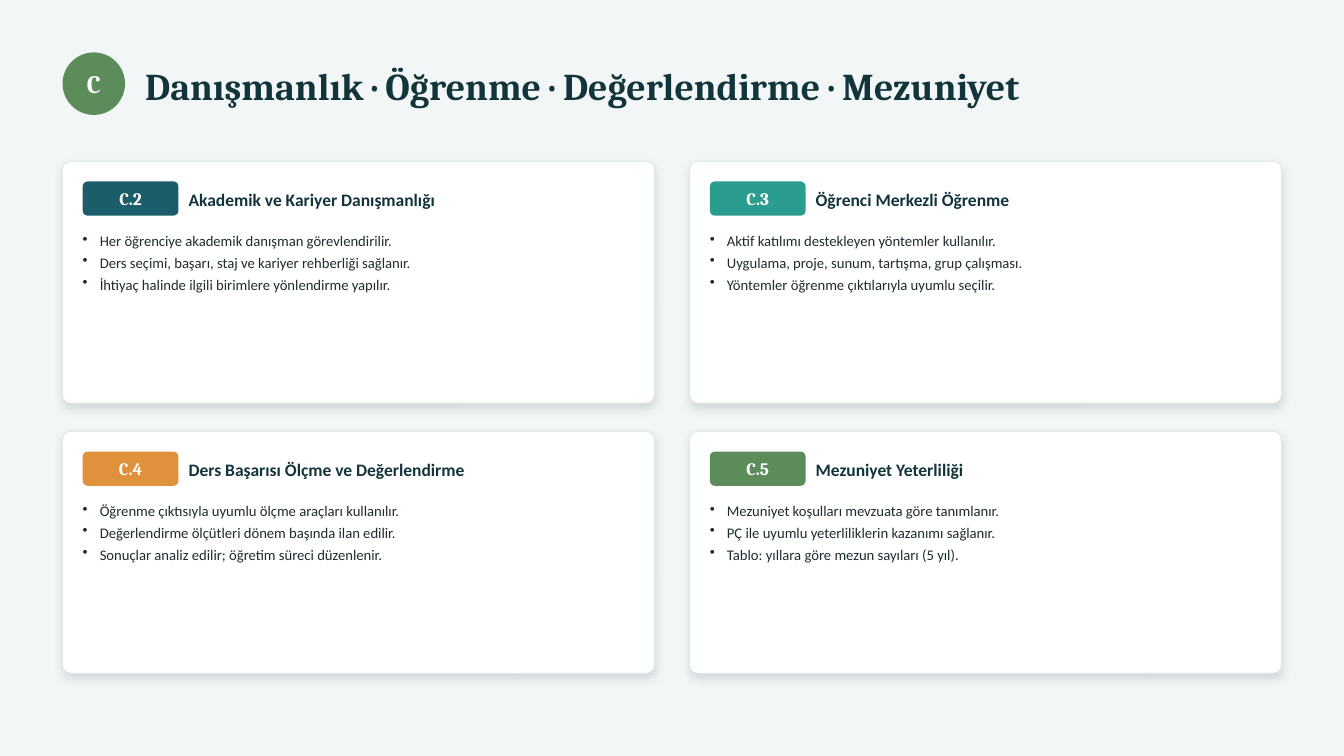
import pptx
import pptx.dml.color
import pptx.enum.shapes
import pptx.enum.text
import pptx.oxml
import pptx.oxml.ns
import pptx.util

PX = 9144  # EMU per px, 100 px to the inch
SHAPE = pptx.enum.shapes.MSO_SHAPE
ALIGN = pptx.enum.text.PP_ALIGN
ANCHOR = pptx.enum.text.MSO_ANCHOR

BACKGROUND, WHITE, BORDER = "F3F6F7", "FFFFFF", "E2E9EA"
HEADING, BODY = "12343B", "1F2C30"
PETROL, TEAL, ORANGE, GREEN = "1C5D6B", "2A9D8F", "E0913B", "5B8C5A"
SERIF, SANS = "Cambria", "Calibri"

# Card grid
CARD_LEFT, CARD_TOP = 62, 160
CARD_WIDTH, CARD_HEIGHT = 587, 240
GAP_X, GAP_Y = 35, 28
PADDING = 20
BADGE_WIDTH, BADGE_HEIGHT = 95, 34
INDENT = 17

CARDS = [
    ("C.2", PETROL, "Akademik ve Kariyer Danışmanlığı", [
        "Her öğrenciye akademik danışman görevlendirilir.",
        "Ders seçimi, başarı, staj ve kariyer rehberliği sağlanır.",
        "İhtiyaç halinde ilgili birimlere yönlendirme yapılır."]),
    ("C.3", TEAL, "Öğrenci Merkezli Öğrenme", [
        "Aktif katılımı destekleyen yöntemler kullanılır.",
        "Uygulama, proje, sunum, tartışma, grup çalışması.",
        "Yöntemler öğrenme çıktılarıyla uyumlu seçilir."]),
    ("C.4", ORANGE, "Ders Başarısı Ölçme ve Değerlendirme", [
        "Öğrenme çıktısıyla uyumlu ölçme araçları kullanılır.",
        "Değerlendirme ölçütleri dönem başında ilan edilir.",
        "Sonuçlar analiz edilir; öğretim süreci düzenlenir."]),
    ("C.5", GREEN, "Mezuniyet Yeterliliği", [
        "Mezuniyet koşulları mevzuata göre tanımlanır.",
        "PÇ ile uyumlu yeterliliklerin kazanımı sağlanır.",
        "Tablo: yıllara göre mezun sayıları (5 yıl)."]),
]


def color(hex_string):
    return pptx.dml.color.RGBColor.from_string(hex_string)


def px(*lengths):
    return [length * PX for length in lengths]


def add_bullet(paragraph):
    properties = paragraph._p.get_or_add_pPr()
    properties.set("marL", str(INDENT * PX))
    properties.set("indent", str(-INDENT * PX))
    bullet = pptx.oxml.parse_xml(
        f'<a:buChar {pptx.oxml.ns.nsdecls("a")} char="•"/>')
    properties.append(bullet)
    paragraph.space_after = pptx.util.Pt(3)


def write_text(shape, lines, *, size, font=SANS, fill=HEADING, bold=False,
               align=ALIGN.LEFT, anchor=ANCHOR.MIDDLE, bullets=False):
    frame = shape.text_frame
    frame.word_wrap = True
    frame.vertical_anchor = anchor
    frame.margin_left = frame.margin_right = 0
    frame.margin_top = frame.margin_bottom = 0
    frame.text = "\n".join(lines)
    for paragraph in frame.paragraphs:
        paragraph.alignment = align
        if bullets:
            add_bullet(paragraph)
        for run in paragraph.runs:
            run.font.size = pptx.util.Pt(size)
            run.font.name = font
            run.font.bold = bold
            run.font.color.rgb = color(fill)


def add_text(slide, box, lines, **text_format):
    write_text(slide.shapes.add_textbox(*px(*box)), lines, **text_format)


def add_block(slide, kind, box, fill, line=None, radius=0):
    """Filled shape; radius is the corner radius in px."""
    shape = slide.shapes.add_shape(kind, *px(*box))
    shape.shadow.inherit = False
    shape.fill.solid()
    shape.fill.fore_color.rgb = color(fill)
    if line:
        shape.line.color.rgb = color(line)
        shape.line.width = pptx.util.Pt(0.75)
    else:
        shape.line.fill.background()
    if radius:
        shape.adjustments[0] = radius / min(box[2:])
    return shape


def add_soft_shadow(shape):
    effects = shape._element.spPr.find(pptx.oxml.ns.qn("a:effectLst"))
    effects.append(pptx.oxml.parse_xml(
        f'<a:outerShdw {pptx.oxml.ns.nsdecls("a")} blurRad="{pptx.util.Pt(7)}"'
        f' dist="{pptx.util.Pt(3)}" dir="5400000" algn="bl" rotWithShape="0">'
        '<a:srgbClr val="0C2A30"><a:alpha val="14000"/></a:srgbClr>'
        '</a:outerShdw>'))


def add_badge(slide, kind, box, label, fill, size, radius=0):
    badge = add_block(slide, kind, box, fill, radius=radius)
    write_text(badge, [label], size=size, font=SERIF, fill=WHITE, bold=True,
               align=ALIGN.CENTER)


def add_card(slide, left, top, code, accent, title, points):
    card = add_block(slide, SHAPE.ROUNDED_RECTANGLE,
                     (left, top, CARD_WIDTH, CARD_HEIGHT),
                     WHITE, line=BORDER, radius=8)
    add_soft_shadow(card)

    inner_left, inner_top = left + PADDING, top + PADDING
    inner_width = CARD_WIDTH - 2 * PADDING
    add_badge(slide, SHAPE.ROUNDED_RECTANGLE,
              (inner_left, inner_top, BADGE_WIDTH, BADGE_HEIGHT),
              code, accent, 12.5, radius=5)

    title_offset = BADGE_WIDTH + 10
    add_text(slide, (inner_left + title_offset, inner_top - 2,
                     inner_width - title_offset, 40),
             [title], size=12.5, bold=True)
    add_text(slide, (inner_left, inner_top + 50, inner_width, 150),
             points, size=10.5, fill=BODY, anchor=ANCHOR.TOP, bullets=True)


def main():
    presentation = pptx.Presentation()
    presentation.slide_width, presentation.slide_height = px(1333, 750)
    slide = presentation.slides.add_slide(presentation.slide_layouts[6])
    slide.background.fill.solid()
    slide.background.fill.fore_color.rgb = color(BACKGROUND)

    # Header
    add_badge(slide, SHAPE.OVAL, (62, 52, 62, 62), "C", GREEN, 18)
    add_text(slide, (144, 50, 1127, 70),
             ["Danışmanlık · Öğrenme · Değerlendirme · Mezuniyet"],
             size=27, font=SERIF, bold=True)

    # Cards, two per row
    for index, card in enumerate(CARDS):
        row, column = divmod(index, 2)
        add_card(slide, CARD_LEFT + column * (CARD_WIDTH + GAP_X),
                 CARD_TOP + row * (CARD_HEIGHT + GAP_Y), *card)

    presentation.save("out.pptx")


if __name__ == "__main__":
    main()
